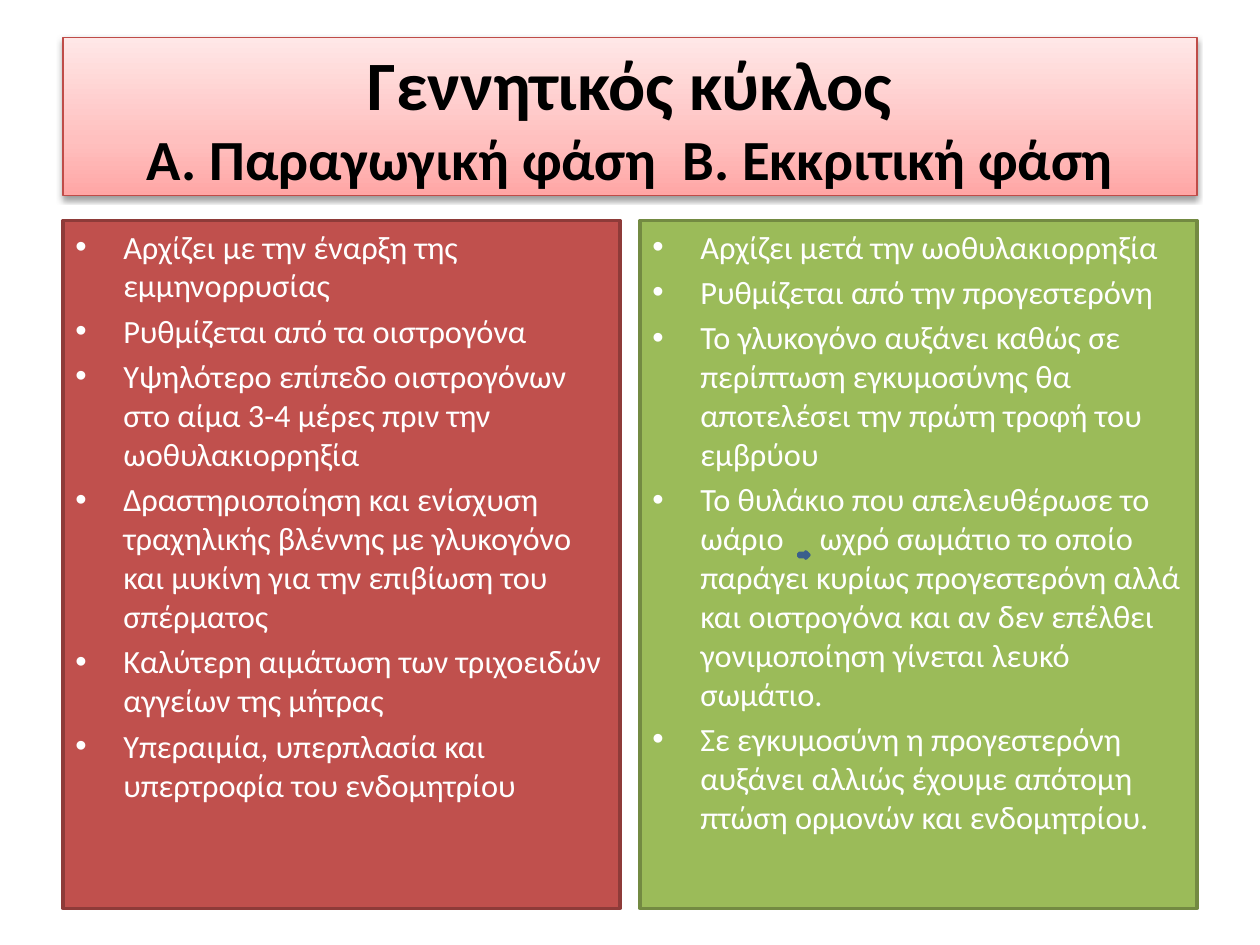
import pptx
import pptx.util
import pptx.oxml
import pptx.dml.color
import pptx.enum.shapes
import pptx.enum.text

Inches = pptx.util.Inches
Pt = pptx.util.Pt
SHAPE = pptx.enum.shapes.MSO_SHAPE
ALIGN = pptx.enum.text.PP_ALIGN
ANCHOR = pptx.enum.text.MSO_ANCHOR
NS = 'xmlns:a="http://schemas.openxmlformats.org/drawingml/2006/main"'

COLORS = {
    "text": "000000", "white": "FFFFFF",
    "pink": "FFA6A5", "rose": "FFC0BF", "blush": "FFE7E7", "edge": "BF4C48",
    "red": "C0504D", "maroon": "8E3B39",
    "green": "9BBB59", "olive": "738A42",
    "blue": "4F81BD", "navy": "3A5F8C",
}
GROWTH = [
    "Αρχίζει με την έναρξη της εμμηνορρυσίας",
    "Ρυθμίζεται από τα οιστρογόνα",
    "Υψηλότερο επίπεδο οιστρογόνων στο αίμα 3-4 μέρες πριν την ωοθυλακιορρηξία",
    "Δραστηριοποίηση και ενίσχυση τραχηλικής βλέννης με γλυκογόνο και μυκίνη "
    "για την επιβίωση του σπέρματος",
    "Καλύτερη αιμάτωση των τριχοειδών αγγείων της μήτρας",
    "Υπεραιμία, υπερπλασία και υπερτροφία του ενδομητρίου",
]
LUTEAL = [
    "Αρχίζει μετά την ωοθυλακιορρηξία",
    "Ρυθμίζεται από την προγεστερόνη",
    "Το γλυκογόνο αυξάνει καθώς σε περίπτωση εγκυμοσύνης θα αποτελέσει "
    "την πρώτη τροφή του εμβρύου",
    "Το θυλάκιο που απελευθέρωσε το ωάριο|ωχρό σωμάτιο το οποίο παράγει "
    "κυρίως προγεστερόνη αλλά και οιστρογόνα και αν δεν επέλθει "
    "γονιμοποίηση γίνεται λευκό σωμάτιο.",
    "Σε εγκυμοσύνη η προγεστερόνη αυξάνει αλλιώς έχουμε απότομη πτώση "
    "ορμονών και ενδομητρίου.",
]


def rgb(name):
    """Return the named colour."""
    return pptx.dml.color.RGBColor.from_string(COLORS[name])


def add_box(slide, kind, box, fill, line, width):
    """Add a filled, outlined shape without a shadow."""
    shape = slide.shapes.add_shape(kind, *map(Inches, box))
    shape.shadow.inherit = False
    shape.fill.solid()
    shape.fill.fore_color.rgb = rgb(fill)
    shape.line.color.rgb = rgb(line)
    shape.line.width = Pt(width)
    return shape


def add_run(para, text, size, color, bold=False, track=0):
    """Add a run, tracked by a number of points."""
    run = para.add_run()
    run.text = text
    run.font.name = "Calibri"
    run.font.size = Pt(size)
    run.font.bold = bold
    run.font.color.rgb = rgb(color)
    if track:
        run.font._element.set("spc", str(round(track * 100)))


def add_text(para, text, size, color, gap, bold=False):
    """Fill a paragraph, widening the space at each bar."""
    for i, part in enumerate(text.split("|")):
        if i:
            add_run(para, " ", size, color, bold, gap)
        add_run(para, part, size, color, bold)


def add_title(slide, box):
    """Place the shaded title banner."""
    shape = add_box(slide, SHAPE.RECTANGLE, box, "pink", "edge", 0.75)
    stops = "".join(
        f'<a:gs pos="{pos * 1000}"><a:srgbClr val="{COLORS[name]}"/></a:gs>'
        for pos, name in [(0, "pink"), (35, "rose"), (100, "blush")])
    grad = pptx.oxml.parse_xml(
        f'<a:gradFill {NS} rotWithShape="1"><a:gsLst>{stops}</a:gsLst>'
        '<a:lin ang="16200000" scaled="0"/></a:gradFill>')
    props = shape._element.spPr
    props.replace(props.find(pptx.oxml.ns.qn("a:solidFill")), grad)
    glow = pptx.oxml.parse_xml(
        f'<a:outerShdw {NS} blurRad="{Pt(3.1)}" dist="{Pt(1.6)}" dir="5400000" '
        f'rotWithShape="0"><a:srgbClr val="{COLORS["text"]}">'
        '<a:alpha val="38000"/></a:srgbClr></a:outerShdw>')
    props.find(pptx.oxml.ns.qn("a:effectLst")).append(glow)
    frame = shape.text_frame
    frame.word_wrap = True
    frame.vertical_anchor = ANCHOR.MIDDLE
    para = frame.paragraphs[0]
    para.alignment = ALIGN.CENTER
    add_text(para, "Γεννητικός κύκλος", 39.6, "text", 0, True)
    para.add_line_break()
    add_text(para, "Α. Παραγωγική φάση|Β. Εκκριτική φάση", 32.4, "text", 7.3, True)


def add_phase(slide, box, items, fill, line):
    """Place one column of bulleted facts."""
    shape = add_box(slide, SHAPE.RECTANGLE, box, fill, line, 2)
    frame = shape.text_frame
    frame.word_wrap = True
    frame.vertical_anchor = ANCHOR.TOP
    for i, item in enumerate(items):
        para = frame.add_paragraph() if i else frame.paragraphs[0]
        para.alignment = ALIGN.LEFT
        para.space_before = Pt(3.7 if i else 0)
        props = para._p.get_or_add_pPr()
        props.set("marL", str(Inches(0.38)))
        props.set("indent", str(Inches(-0.38)))
        props.append(pptx.oxml.parse_xml(f'<a:buFont {NS} typeface="Arial"/>'))
        props.append(pptx.oxml.parse_xml(f'<a:buChar {NS} char="•"/>'))
        add_text(para, item, 18.5, "white", 16.5)


def main():
    """Build and save the slide."""
    deck = pptx.Presentation()
    deck.slide_width, deck.slide_height = Inches(10), Inches(7.5)
    slide = deck.slides.add_slide(deck.slide_layouts[6])
    add_title(slide, (0.5, 0.3, 9, 1.25))
    phases = [(GROWTH, "red", "maroon"), (LUTEAL, "green", "olive")]
    for i, (items, fill, line) in enumerate(phases):
        add_phase(slide, (0.5 + i * 4.58, 1.75, 4.42, 5.46), items, fill, line)
    add_box(slide, SHAPE.RIGHT_ARROW, (6.34, 4.38, 0.08, 0.05), "blue", "navy", 2)
    deck.save("out.pptx")


if __name__ == "__main__":
    main()
